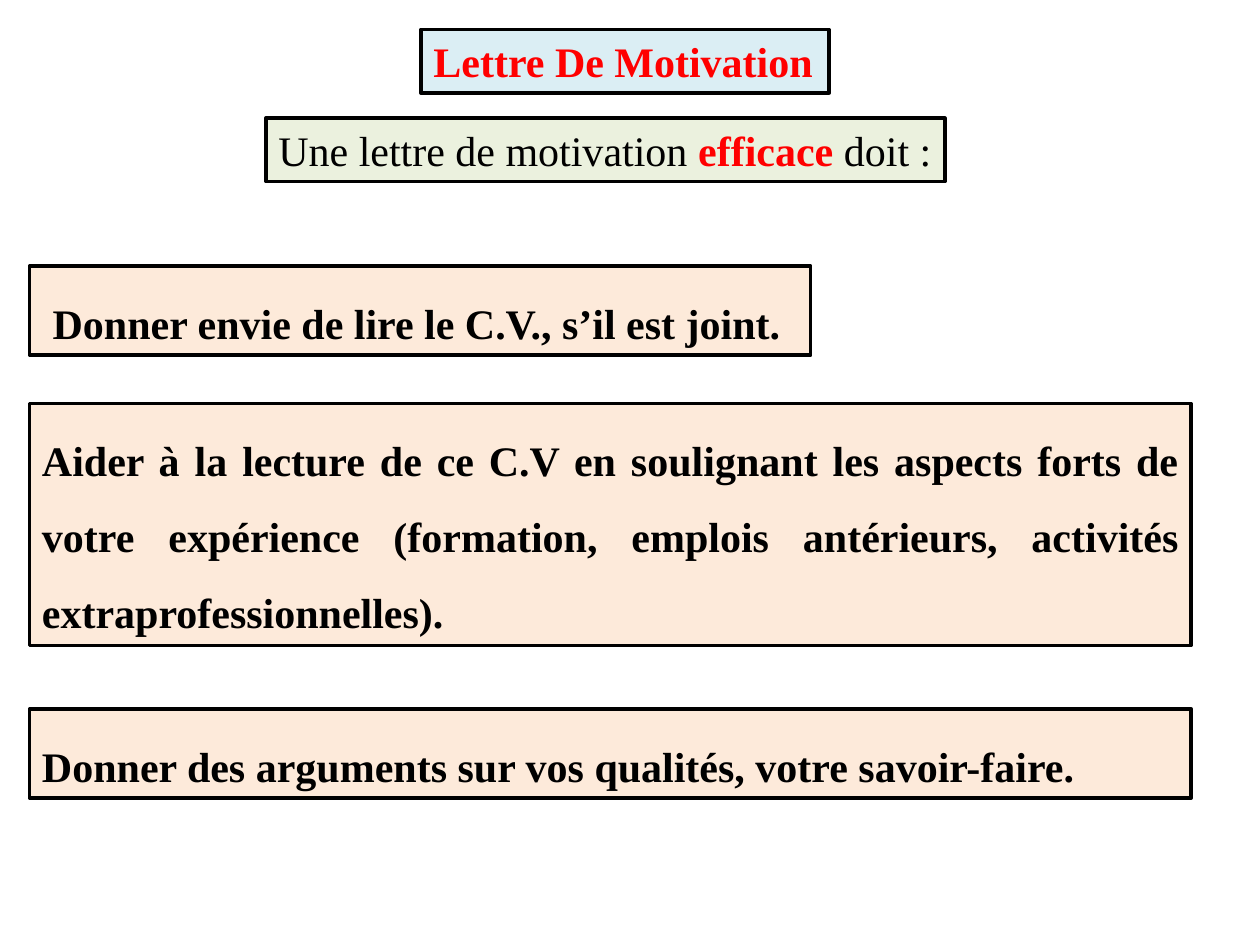
from pptx import Presentation
from pptx.dml.color import RGBColor
from pptx.enum.shapes import MSO_SHAPE
from pptx.enum.text import MSO_ANCHOR, MSO_AUTO_SIZE, PP_ALIGN
from pptx.util import Pt

COLORS = {
    "title_fill": "DBEEF4",
    "intro_fill": "EBF1DE",
    "advice_fill": "FDEADA",
    "ink": "000000",
    "accent": "FF0000",
}
FONT = "Times New Roman"
TITLE_BOX = (240.5, 16.8, 233.3, 36.3)
INTRO_BOX = (152, 67.5, 388, 36.3)
ADVICE_LEFT = 16.9
ADVICE_WIDTH = 663.8
ONE_LINE_HEIGHT = 51
INSET = 7.2
SPACE_WIDTH = 6

# Top, width, height, left inset, text
ADVICE = [
    (152, 446.4, ONE_LINE_HEIGHT, INSET + SPACE_WIDTH,
     "Donner envie de lire le C.V., s’il est joint."),
    (230.6, ADVICE_WIDTH, 138.3, INSET,
     "Aider à la lecture de ce C.V en soulignant les aspects forts de votre "
     "expérience (formation, emplois antérieurs, activités extraprofessionnelles)."),
    (405, ADVICE_WIDTH, ONE_LINE_HEIGHT, INSET,
     "Donner des arguments sur vos qualités, votre savoir-faire."),
]


def color(name):
    return RGBColor.from_string(COLORS[name])


def frame_box(shape, box, fill):
    """Place a shape, give it a fill and a black border, and return its text frame."""
    shape.left, shape.top, shape.width, shape.height = map(Pt, box)
    shape.fill.solid()
    shape.fill.fore_color.rgb = color(fill)
    shape.line.color.rgb = color("ink")
    shape.line.width = Pt(2)
    frame = shape.text_frame
    frame.auto_size = MSO_AUTO_SIZE.NONE
    frame.vertical_anchor = MSO_ANCHOR.MIDDLE
    return frame


def add_rectangle(page, box, fill):
    shape = page.shapes.add_shape(MSO_SHAPE.RECTANGLE, *map(Pt, box))
    shape.shadow.inherit = False
    return frame_box(shape, box, fill)


def add_span(para, text, ink="ink", bold=True):
    span = para.add_run()
    span.text = text
    span.font.name = FONT
    span.font.size = Pt(24)
    span.font.bold = bold
    span.font.color.rgb = color(ink)


def add_title(page, box):
    frame = frame_box(page.shapes.title, box, "title_fill")
    frame.word_wrap = False
    para = frame.paragraphs[0]
    para.alignment = PP_ALIGN.LEFT
    add_span(para, "Lettre De Motivation", "accent")


def add_intro(page, box):
    frame = add_rectangle(page, box, "intro_fill")
    frame.word_wrap = False
    para = frame.paragraphs[0]
    para.alignment = PP_ALIGN.LEFT
    add_span(para, "Une lettre de motivation ", bold=False)
    add_span(para, "efficace", "accent")
    add_span(para, " doit :", bold=False)


def add_advice(page, box, inset, text):
    frame = add_rectangle(page, box, "advice_fill")
    frame.word_wrap = True
    frame.vertical_anchor = MSO_ANCHOR.TOP
    frame.margin_left = Pt(inset)
    para = frame.paragraphs[0]
    para.alignment = PP_ALIGN.JUSTIFY
    para.line_spacing = 1.5
    add_span(para, text)


def main():
    deck = Presentation()
    deck.slide_width, deck.slide_height = Pt(720), Pt(540)
    page = deck.slides.add_slide(deck.slide_layouts[5])
    add_title(page, TITLE_BOX)
    add_intro(page, INTRO_BOX)
    for top, width, height, inset, text in ADVICE:
        add_advice(page, (ADVICE_LEFT, top, width, height), inset, text)
    deck.save("out.pptx")


if __name__ == "__main__":
    main()
